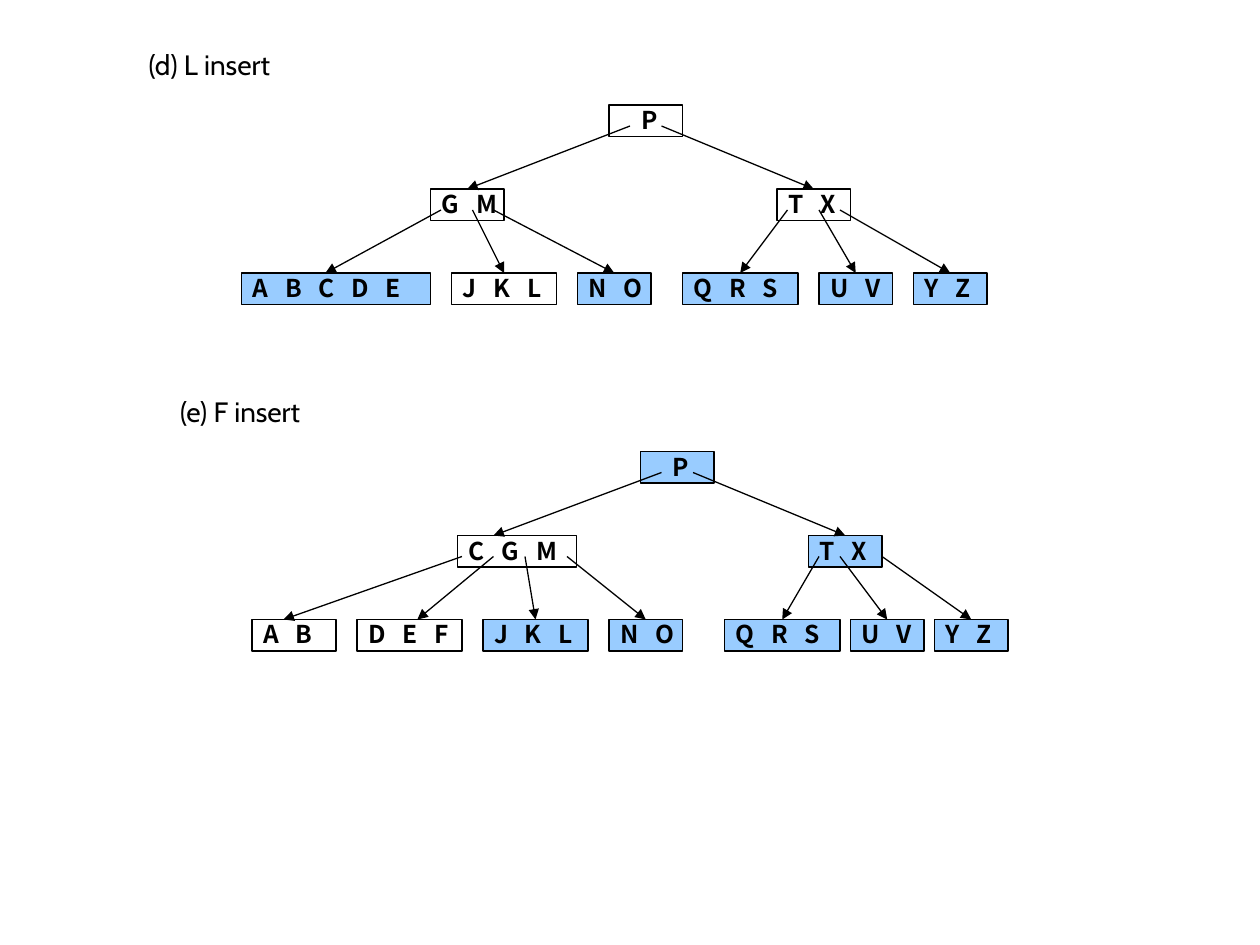
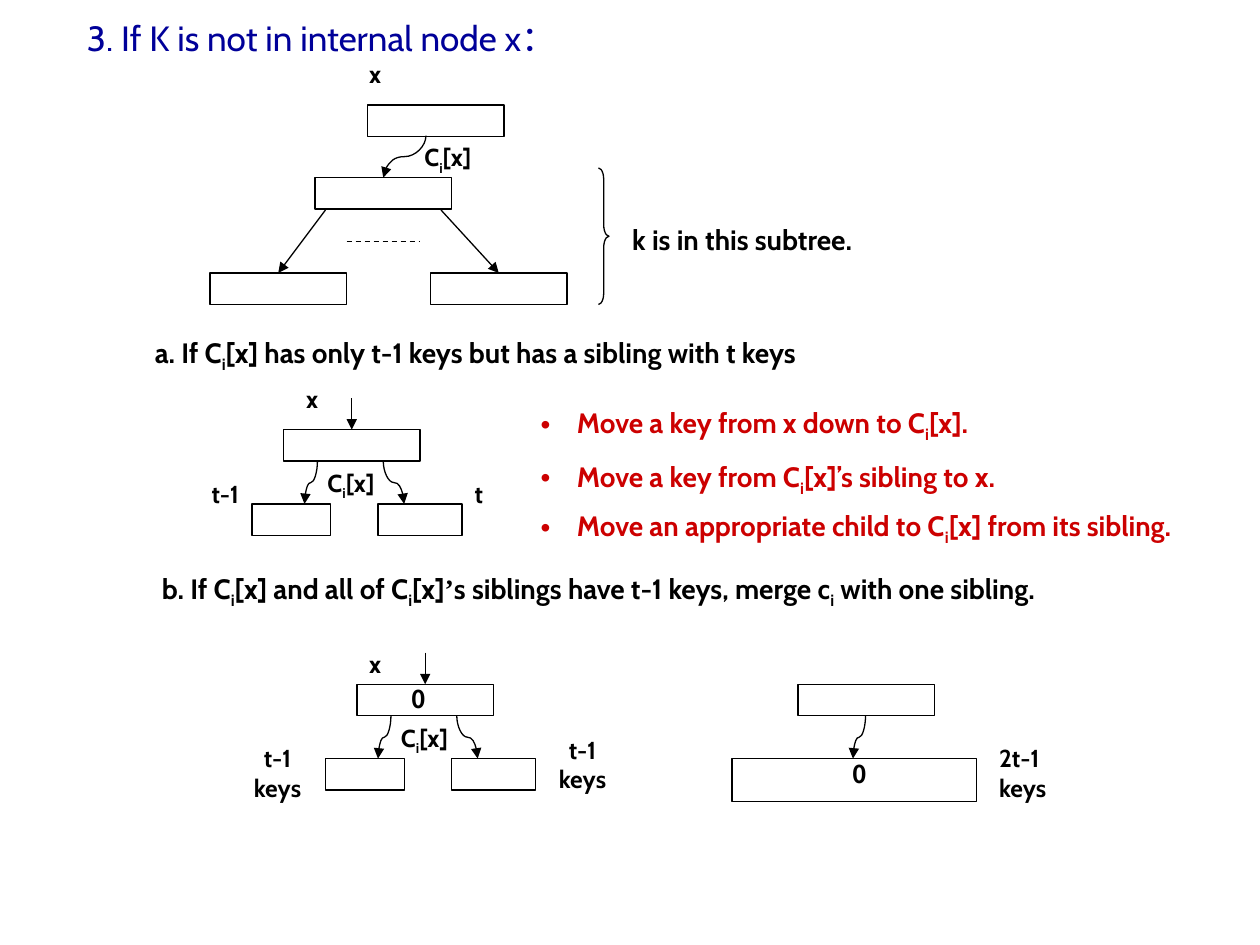
from dataclasses import dataclass

from lxml.etree import SubElement
from pptx import Presentation
from pptx.dml.color import RGBColor
from pptx.enum.dml import MSO_LINE
from pptx.enum.shapes import MSO_CONNECTOR as LINK, MSO_SHAPE as SHAPE
from pptx.enum.text import MSO_ANCHOR as ANCHOR, MSO_AUTO_SIZE as FIT, PP_ALIGN as ALIGN
from pptx.oxml.ns import qn
from pptx.util import Pt

# Shared look
BLACK = RGBColor(0x00, 0x00, 0x00)
NAVY = RGBColor(0x00, 0x00, 0x99)
RED = RGBColor(0xCC, 0x00, 0x00)
SKY = RGBColor(0x99, 0xCC, 0xFF)
TEXT_FONT, KEY_FONT, QUOTE_FONT = "Cabin", "Noto Sans CJK TC", "Times New Roman"

# Node geometry
NODE_H = 18
LEVEL_STEP = 48
POINTER_DEPTH = 12
KEY_INSET = 6.4
KEY_SPACING = 3.2
BOX_W = 78
SNAP = 4


@dataclass
class Node:
    keys: str
    left: float
    width: float = 42
    fill: RGBColor = None
    pointer: tuple = ()  # x where the parent's arrow starts and ends
    children: tuple = ()
    inset: float = KEY_INSET


TREE_D = Node("P", 348, inset=18.5, children=(
    Node("G M", 246, pointer=(360, 264), children=(
        Node("A B C D E", 138, 108, SKY, (252, 186)),
        Node("J K L", 258, 60, None, (270, 288)),
        Node("N O", 330, 42, SKY, (282, 354)))),
    Node("T X", 444, pointer=(378, 466.5), children=(
        Node("Q R S", 390, 66, SKY, (450, 420)),
        Node("U V", 468, 42, SKY, (468, 486)),
        Node("Y Z", 522, 42, SKY, (480, 546))))))

TREE_E = Node("P", 366, fill=SKY, inset=18.5, children=(
    Node("C G M", 261.5, 68, None, (378, 282), children=(
        Node("A B", 144, 48, None, (264, 162)),
        Node("D E F", 204, 60, None, (282, 238.5)),
        Node("J K L", 276, 60, SKY, (300, 302.5)),
        Node("N O", 348, 42, SKY, (324, 368.5)))),
    Node("T X", 462, 42, SKY, (396, 484.5), children=(
        Node("Q R S", 414, 66, SKY, (468, 446)),
        Node("U V", 486, 42, SKY, (480, 506)),
        Node("Y Z", 534, 42, SKY, (504, 554.5))))))


# Text
def add_run(paragraph, text, size, bold=True, color=BLACK, font=TEXT_FONT):
    run = paragraph.add_run()
    run.text = text
    run.font.name, run.font.size = font, Pt(size)
    run.font.bold, run.font.color.rgb = bold, color
    return run


def add_indexed(paragraph, text, size, **style):
    """Add text in which every "_i" becomes a subscript i."""
    for number, part in enumerate(text.split("_i")):
        if number:
            index = add_run(paragraph, "i", size, **style)
            index.font._element.set("baseline", "-25000")
        add_run(paragraph, part, size, **style)


def add_label(slide, left, top, lines, width=58, size=14, align=ALIGN.LEFT, **style):
    height = 7.2 + 1.2 * size * len(lines)
    frame = slide.shapes.add_textbox(Pt(left), Pt(top), Pt(width), Pt(height)).text_frame
    frame.word_wrap = True
    for number, line in enumerate(lines):
        paragraph = frame.add_paragraph() if number else frame.paragraphs[0]
        paragraph.alignment = align
        add_indexed(paragraph, line, size, **style)
    return frame


def place(placeholder, left, top, width, height):
    placeholder.left, placeholder.top = Pt(left), Pt(top)
    placeholder.width, placeholder.height = Pt(width), Pt(height)
    frame = placeholder.text_frame
    frame.auto_size, frame.vertical_anchor = FIT.NONE, ANCHOR.TOP
    return frame


# Boxes and lines
def set_outline(line):
    line.color.rgb, line.width = BLACK, Pt(0.75)


def add_box(slide, left, top, width=BOX_W, height=NODE_H, keys="", fill=None, inset=KEY_INSET):
    box = slide.shapes.add_shape(SHAPE.RECTANGLE, Pt(left), Pt(top), Pt(width), Pt(height))
    box.shadow.inherit = False
    set_outline(box.line)
    if fill:
        box.fill.solid()
        box.fill.fore_color.rgb = fill
    else:
        box.fill.background()
    if keys:
        frame = box.text_frame
        frame.vertical_anchor = ANCHOR.TOP
        frame.margin_left = Pt(inset)
        frame.margin_top = frame.margin_right = frame.margin_bottom = 0
        paragraph = frame.paragraphs[0]
        paragraph.alignment = ALIGN.LEFT
        if keys[:-1]:
            spaced = add_run(paragraph, keys[:-1], 14, font=KEY_FONT)
            spaced.font._element.set("spc", str(round(KEY_SPACING * 100)))
        add_run(paragraph, keys[-1], 14, font=KEY_FONT)
    return box


def add_link(slide, start, end, kind=LINK.STRAIGHT, arrow=True):
    link = slide.shapes.add_connector(kind, *(Pt(v) for v in (*start, *end)))
    set_outline(link.line)
    properties = link.element.spPr
    if arrow:
        SubElement(properties.find(qn("a:ln")), qn("a:tailEnd"), type="triangle")
    SubElement(properties, qn("a:effectLst"))
    return link


def add_pointer(slide, start, box, end_x):
    """Arrow to the top of a box, joined to it where it meets the middle."""
    link = add_link(slide, start, (end_x, box.top.pt))
    if abs(box.left.pt + box.width.pt / 2 - end_x) <= SNAP:
        link.end_connect(box, 0)


def add_curve(slide, start, end):
    """S-curve that leaves and arrives vertically: a level one, turned a quarter."""
    (x1, y1), (x2, y2) = start, end
    mid_x, mid_y = (x1 + x2) / 2, (y1 + y2) / 2
    half_w, half_h = (x2 - x1) / 2, (y2 - y1) / 2
    link = add_link(slide, (mid_x - half_h, mid_y + half_w),
                    (mid_x + half_h, mid_y - half_w), LINK.CURVE)
    link.element.spPr.find(qn("a:xfrm")).set("rot", str(90 * 60000))


# Diagrams
def draw_tree(slide, node, top):
    box = add_box(slide, node.left, top, node.width, NODE_H, node.keys, node.fill, node.inset)
    for child in node.children:
        child_box = draw_tree(slide, child, top + LEVEL_STEP)
        start_x, end_x = child.pointer
        add_pointer(slide, (start_x, top + POINTER_DEPTH), child_box, end_x)
    return box


def draw_siblings(slide, left, top, x_label, keys=""):
    """Node x with an incoming arrow and two neighbouring children."""
    parent = add_box(slide, left, top, keys=keys, inset=31.3)
    middle, bottom, child_top = left + BOX_W / 2, top + NODE_H, top + 42.5
    add_pointer(slide, (middle, top - NODE_H), parent, middle)
    add_box(slide, left - 18, child_top, 45)
    add_box(slide, left + 54, child_top, 48)
    add_curve(slide, (left + 19.4, bottom), (left + 12, child_top))
    add_curve(slide, (left + 57, bottom), (left + 69, child_top))
    add_label(slide, *x_label, ["x"], 24)
    add_label(slide, left + 18, top + 18.5, ["C_i[x]"])


def draw_subtree(slide):
    add_box(slide, 210, 60)
    add_label(slide, 203.8, 30.2, ["x"], 24)
    add_box(slide, 180, 101.5)
    add_curve(slide, (243.4, 77.5), (219, 101.5))
    add_label(slide, 235.4, 77.8, ["C_i[x]"])
    for leaf_left, start_x, end_x in ((120, 186, 156), (246, 252, 288)):
        leaf = add_box(slide, leaf_left, 156)
        add_pointer(slide, (start_x, 120), leaf, end_x)
    dots = add_link(slide, (198, 138), (240, 138), arrow=False)
    dots.line.dash_style = MSO_LINE.DASH
    brace = slide.shapes.add_shape(SHAPE.RIGHT_BRACE, Pt(342), Pt(96), Pt(6), Pt(78))
    brace.shadow.inherit = False
    brace.fill.background()
    set_outline(brace.line)
    brace.adjustments[0] = 1.083
    add_label(slide, 354.2, 123.8, ["k is in this subtree."], 168, 16)


# Slides
def build_insert_slide(deck):
    slide = deck.slides.add_slide(deck.slide_layouts[6])
    add_label(slide, 77.8, 23.8, ["(d) L insert"], 94, 16, bold=False)
    draw_tree(slide, TREE_D, 60)
    add_label(slide, 95.8, 221.8, ["(e) F insert"], 94, 16, bold=False)
    draw_tree(slide, TREE_E, 258)


def build_delete_slide(deck):
    slide = deck.slides.add_slide(deck.slide_layouts[1])
    heading = place(slide.shapes.title, 42.5, 6, 600, 32)
    heading.paragraphs[0].alignment = ALIGN.LEFT
    add_run(heading.paragraphs[0], "3. If K is not in internal node x：", 20, False, NAVY)
    draw_subtree(slide)

    # Case a: borrow from a sibling
    add_label(slide, 81.4, 188.4, ["a. If C_i[x] has only t-1 keys but has a sibling with t keys"],
              460, 16)
    draw_siblings(slide, 162, 245.5, (167.8, 216))
    add_label(slide, 113.8, 270, ["t-1"])
    add_label(slide, 264.2, 270, ["t"], 24)
    steps = place(slide.placeholders[1], 301.7, 228.2, 410, 78.5)
    moves = (("Move a key from x down to C_i[x].", 1.0),
             ("Move a key from C_i[x]’s sibling to x.", 1.4),
             ("Move an appropriate child to C_i[x] from its sibling.", 1.3))
    for number, (move, spacing) in enumerate(moves):
        step = steps.add_paragraph() if number else steps.paragraphs[0]
        step.line_spacing, step.space_before = spacing, Pt(0)
        indent = Pt(20.8)
        layout = step._p.get_or_add_pPr()
        layout.set("marL", str(indent))
        layout.set("indent", str(-indent))
        add_indexed(step, move, 16, color=RED)

    # Case b: merge with a sibling
    rule = add_label(slide, 85.4, 323.3, ["b. If C_i[x] and all of C_i[x]"], 560, 16).paragraphs[0]
    add_run(rule, "’", 16, font=QUOTE_FONT)
    add_indexed(rule, "s siblings have t-1 keys, merge c_i with one sibling.", 16)
    draw_siblings(slide, 204, 391, (203.8, 367.2), "0")
    for left, top in ((137.3, 421.2), (311.6, 416.2)):
        add_label(slide, left, top, ["t-1", "keys"], 42 + 0.5, align=ALIGN.CENTER)
    add_box(slide, 456, 391)
    add_box(slide, 418.3, 433.5, 139.7, 24.5, "0", inset=68.8)
    add_curve(slide, (494.6, 409), (487.4, 433.5))
    add_label(slide, 563.8, 421.2, ["2t-1", "keys"])


def main():
    deck = Presentation()
    deck.slide_width, deck.slide_height = Pt(720), Pt(540)
    build_insert_slide(deck)
    build_delete_slide(deck)
    deck.save("out.pptx")


if __name__ == "__main__":
    main()
